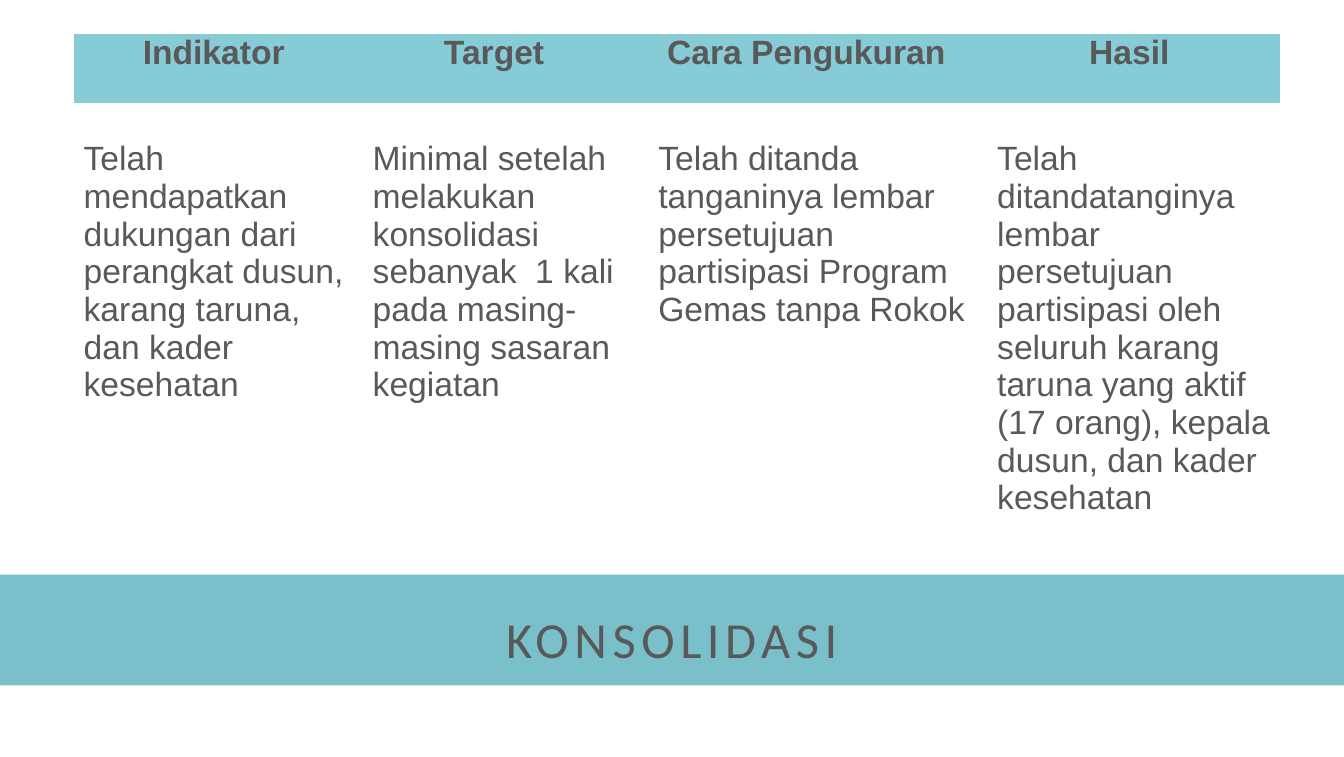
from lxml import etree
from pptx import Presentation
from pptx import util as u
from pptx.dml.color import RGBColor
from pptx.enum import shapes, text
from pptx.oxml import ns

WIDTH, HEIGHT = 50.77, 28.58
NO_STYLE = "{2D5ABB26-0587-4C30-8999-92F81FD0307C}"
COLUMNS = [
    (10.59, 0.38, "Indikator",
     "Telah mendapatkan dukungan dari perangkat dusun, karang taruna, dan kader kesehatan"),
    (10.59, 0.71, "Target",
     "Minimal setelah melakukan konsolidasi sebanyak  1 kali pada masing-masing sasaran kegiatan"),
    (13.0, 0.91, "Cara Pengukuran",
     "Telah ditanda tanganinya lembar persetujuan partisipasi Program Gemas tanpa Rokok"),
    (11.4, 0.71, "Hasil",
     "Telah ditandatanginya lembar persetujuan partisipasi oleh seluruh karang taruna "
     "yang aktif (17 orang), kepala dusun, dan kader kesehatan"),
]


def color(value):
    return RGBColor.from_string(value)


def write(frame, content, font="Arial", size=36, fill="595959", bold=False,
          align=text.PP_ALIGN.LEFT, spacing=0):
    frame.word_wrap = True
    paragraph = frame.paragraphs[0]
    paragraph.alignment = align
    run = paragraph.add_run()
    run.text = content
    run.font.name = font
    run.font.size = u.Pt(size)
    run.font.bold = bold
    run.font.color.rgb = color(fill)
    if spacing:
        run.font._element.set("spc", str(spacing * 100))


class SlideBuilder:
    header_fill = "87CBD6"
    band_fill = "3DA4B5"
    side_margin = 0.18

    def __init__(self, presentation):
        self.slide = presentation.slides.add_slide(presentation.slide_layouts[6])

    def band(self, content, top, height, opacity):
        shape = self.slide.shapes.add_shape(
            shapes.MSO_SHAPE.RECTANGLE, 0, u.Cm(top), u.Cm(WIDTH), u.Cm(height))
        shape.shadow.inherit = False
        shape.line.fill.background()
        shape.fill.solid()
        shape.fill.fore_color.rgb = color(self.band_fill)
        fill_color = shape._element.spPr.find(".//" + ns.qn("a:srgbClr"))
        etree.SubElement(fill_color, ns.qn("a:alpha")).set("val", str(opacity * 1000))
        frame = shape.text_frame
        frame.vertical_anchor = text.MSO_ANCHOR.MIDDLE
        frame.margin_top = u.Cm(0.74)
        frame.margin_bottom = u.Cm(0.13)
        write(frame, content, font="Calibri", size=54,
              align=text.PP_ALIGN.CENTER, spacing=6)

    def cell(self, cell, content, left, top=0, fill=None, **style):
        cell.margin_left = u.Cm(left)
        cell.margin_right = u.Cm(self.side_margin)
        cell.margin_top = u.Cm(top)
        cell.margin_bottom = 0
        if fill:
            cell.fill.solid()
            cell.fill.fore_color.rgb = color(fill)
        else:
            cell.fill.background()
        write(cell.text_frame, content, **style)

    def table(self, columns, left, top, row_heights):
        width = sum(column[0] for column in columns)
        table = self.slide.shapes.add_table(
            len(row_heights), len(columns), u.Cm(left), u.Cm(top),
            u.Cm(width), u.Cm(sum(row_heights))).table
        table.first_row = table.horz_banding = False
        table._tbl.tblPr.find(ns.qn("a:tableStyleId")).text = NO_STYLE
        for row, height in zip(table.rows, row_heights):
            row.height = u.Cm(height)
        for index, (width, indent, heading, body) in enumerate(columns):
            table.columns[index].width = u.Cm(width)
            self.cell(table.cell(0, index), heading, self.side_margin,
                      fill=self.header_fill, bold=True, align=text.PP_ALIGN.CENTER)
            self.cell(table.cell(1, index), body, indent, top=1.42)


def main():
    presentation = Presentation()
    presentation.slide_width = u.Cm(WIDTH)
    presentation.slide_height = u.Cm(HEIGHT)
    builder = SlideBuilder(presentation)
    builder.band("KONSOLIDASI", top=21.7, height=4.18, opacity=69)
    builder.table(COLUMNS, left=2.78, top=1.29, row_heights=[2.59, 15.77])
    presentation.save("out.pptx")


if __name__ == "__main__":
    main()
